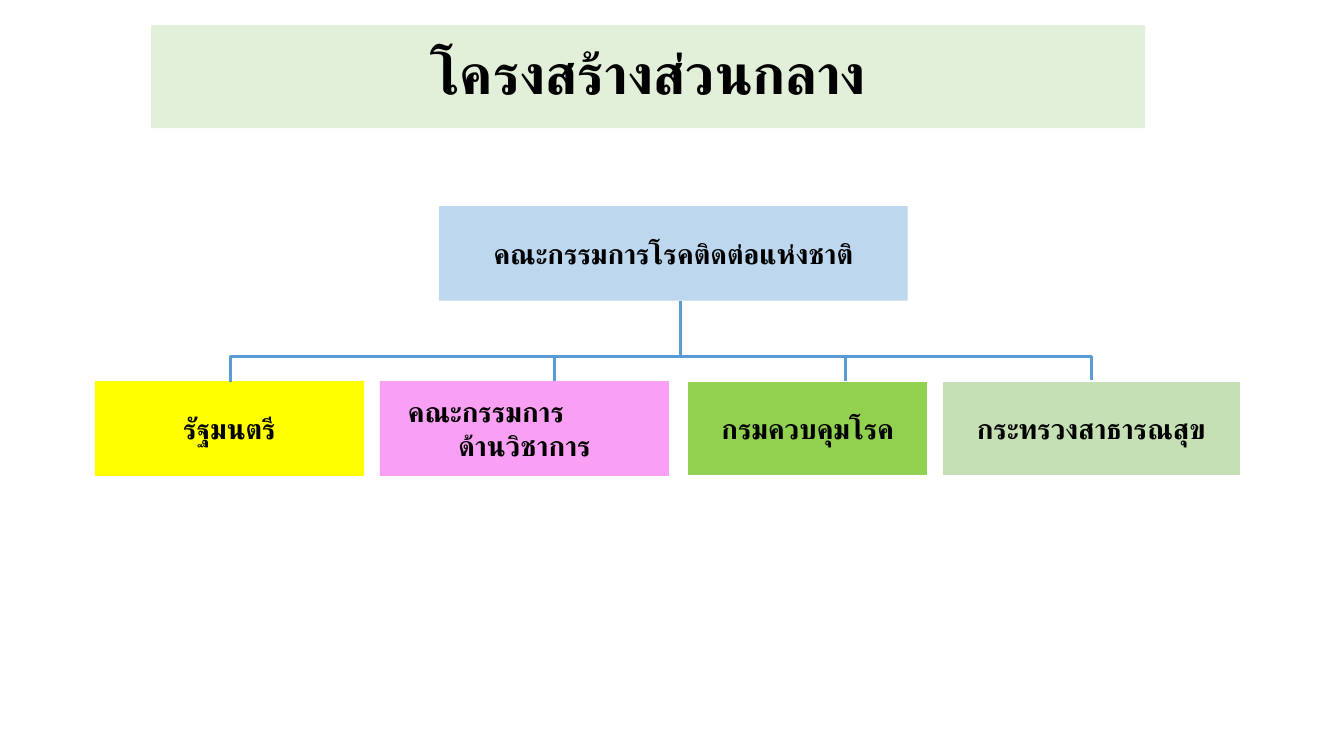
from pptx import Presentation
from pptx.dml.color import RGBColor
from pptx.enum.shapes import MSO_CONNECTOR, MSO_SHAPE
from pptx.enum.text import MSO_ANCHOR, PP_ALIGN
from pptx.oxml.ns import qn
from pptx.util import Pt
from lxml import etree

FONT = "Cabin"
BLACK = RGBColor(0x00, 0x00, 0x00)
WHITE = RGBColor(0xFF, 0xFF, 0xFF)
MINT = RGBColor(0xE2, 0xF0, 0xD9)
LIGHT_BLUE = RGBColor(0xBD, 0xD7, 0xEE)
YELLOW = RGBColor(0xFF, 0xFF, 0x00)
PINK = RGBColor(0xFA, 0xA0, 0xF4)
GREEN = RGBColor(0x92, 0xD0, 0x50)
SAGE = RGBColor(0xC5, 0xE0, 0xB4)
LINE_BLUE = RGBColor(0x5B, 0x9B, 0xD5)

prs = Presentation()
prs.slide_width, prs.slide_height = Pt(960), Pt(540)
s = prs.slides.add_slide(prs.slide_layouts[6])


def add_box(x, y, w, h, fill, text, size=20, border=None):
    sp = s.shapes.add_shape(MSO_SHAPE.RECTANGLE, Pt(x), Pt(y), Pt(w), Pt(h))
    sp.shadow.inherit = False
    sp.fill.solid()
    sp.fill.fore_color.rgb = fill
    if border is None:
        sp.line.fill.background()
    else:
        sp.line.color.rgb = border
        sp.line.width = Pt(1.5)
    tf = sp.text_frame
    tf.word_wrap = True
    tf.vertical_anchor = MSO_ANCHOR.MIDDLE
    p = tf.paragraphs[0]
    p.alignment = PP_ALIGN.CENTER
    r = p.add_run()
    r.text = text
    r.font.name = FONT
    r.font.size = Pt(size)
    r.font.bold = True
    r.font.color.rgb = BLACK
    etree.SubElement(r.font._element, qn("a:cs"), typeface=FONT)
    return tf


def style_line(sp):
    sp.line.color.rgb = LINE_BLUE
    sp.line.width = Pt(2.25)


title = add_box(108, 18, 710, 73.5, MINT, "โครงสร้างส่วนกลาง", size=40)
title.paragraphs[0].line_spacing = 0.9

add_box(313.6, 147.3, 334.8, 67.5, LIGHT_BLUE, "คณะกรรมการโรคติดต่อแห่งชาติ")

ROW_Y, ROW_H = 272.2, 67.7
add_box(67.8, ROW_Y, 192.3, ROW_H, YELLOW, "รัฐมนตรี")
academic = add_box(271.3, ROW_Y, 206.6, ROW_H, PINK, "คณะกรรมการ ด้านวิชาการ")
academic.margin_right = Pt(50)
p = academic.paragraphs[0]
p.alignment = PP_ALIGN.LEFT
pPr = p._p.get_or_add_pPr()
pPr.set("marL", str(Pt(49)))
pPr.set("indent", str(Pt(-36)))
add_box(491, ROW_Y, 172, ROW_H, GREEN, "กรมควบคุมโรค", border=WHITE)
add_box(672.7, ROW_Y, 213.6, ROW_H, SAGE, "กระทรวงสาธารณสุข", border=WHITE)

BUS_Y = 254.6
for x, y1, y2 in [(486, 215, BUS_Y), (396, BUS_Y, ROW_Y), (604, BUS_Y, ROW_Y)]:
    stem = s.shapes.add_connector(MSO_CONNECTOR.STRAIGHT, Pt(x), Pt(y1), Pt(x), Pt(y2))
    style_line(stem)
    etree.SubElement(stem._element.spPr, qn("a:effectLst"))

BUS_LEFT, BUS_RIGHT = 164.7, 780
fb = s.shapes.build_freeform(Pt(BUS_LEFT), Pt(ROW_Y + 0.6))
fb.add_line_segments(
    [(Pt(BUS_LEFT), Pt(BUS_Y)), (Pt(BUS_RIGHT), Pt(BUS_Y)), (Pt(BUS_RIGHT), Pt(ROW_Y - 0.8))],
    close=False,
)
bus = fb.convert_to_shape()
bus.shadow.inherit = False
bus.fill.background()
style_line(bus)

prs.save("out.pptx")
